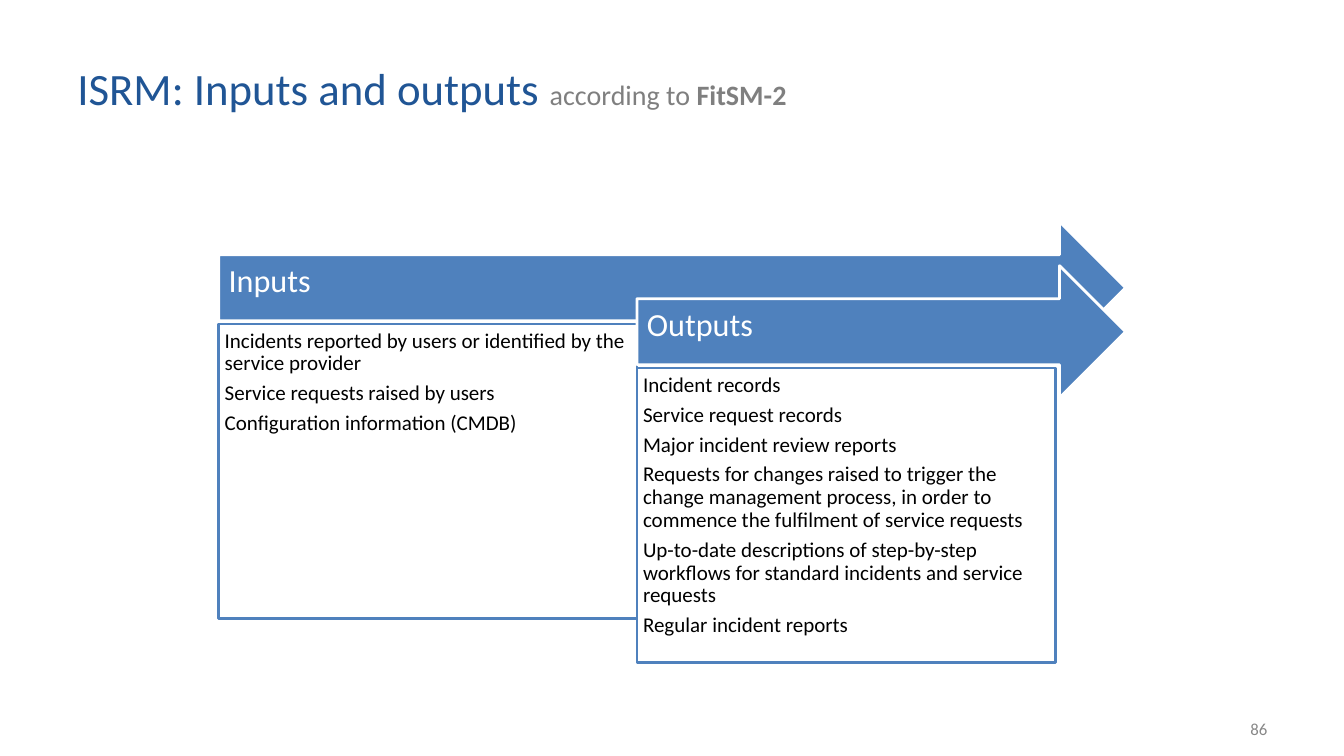
"""Build the slide on ISRM inputs and outputs according to FitSM-2."""
from dataclasses import dataclass

from pptx import Presentation
from pptx.dml.color import RGBColor
from pptx.enum.shapes import MSO_SHAPE
from pptx.enum.text import MSO_ANCHOR, PP_ALIGN
from pptx.util import Pt

ARROW, PANEL = MSO_SHAPE.RIGHT_ARROW, MSO_SHAPE.RECTANGLE
TOP, MIDDLE = MSO_ANCHOR.TOP, MSO_ANCHOR.MIDDLE
LEFT, RIGHT = PP_ALIGN.LEFT, PP_ALIGN.RIGHT


@dataclass(frozen=True)
class Theme:
    font: str = "Calibri"
    title: str = "205595"
    subtitle: str = "7F7F7F"
    accent: str = "4F81BD"
    white: str = "FFFFFF"
    black: str = "000000"
    number: str = "888888"
    title_size: float = 32
    subtitle_size: float = 20
    label_size: float = 23
    item_size: float = 15
    number_size: float = 12


theme = Theme()


def style(font, size, color, bold=False):
    font.name, font.size, font.bold = theme.font, Pt(size), bold
    font.color.rgb = RGBColor.from_string(color)


def add_block(kind, box, fill, line, lines, size, color, anchor, insets):
    block = slide.shapes.add_shape(kind, *map(Pt, box))
    block.shadow.inherit = False
    block.fill.solid()
    block.fill.fore_color.rgb = RGBColor.from_string(fill)
    block.line.color.rgb = RGBColor.from_string(line)
    block.line.width = Pt(2)
    frame = block.text_frame
    frame.word_wrap = True
    frame.vertical_anchor = anchor
    (frame.margin_left, frame.margin_top,
     frame.margin_right, frame.margin_bottom) = map(Pt, insets)
    frame.text = "\n".join(lines)
    for index, paragraph in enumerate(frame.paragraphs):
        paragraph.alignment = LEFT
        paragraph.line_spacing = 0.9
        paragraph.space_before = Pt(5.2 if index else 0)
        style(paragraph.runs[0].font, size, color)


deck = Presentation()
deck.slide_width, deck.slide_height = Pt(960), Pt(540)
slide = deck.slides.add_slide(deck.slide_layouts[6])

heading = slide.shapes.add_textbox(Pt(48.2), Pt(21.6), Pt(712.8), Pt(82)).text_frame
heading.word_wrap = True
heading.vertical_anchor = MIDDLE
for text, size, color, bold in (
    ("ISRM: Inputs and outputs ", theme.title_size, theme.title, False),
    ("according to ", theme.subtitle_size, theme.subtitle, False),
    ("FitSM-2", theme.subtitle_size, theme.subtitle, True),
):
    part = heading.paragraphs[0].add_run()
    part.text = text
    style(part.font, size, color, bold)

flows = {
    "Inputs": [
        "Incidents reported by users or identified by the service provider",
        "Service requests raised by users",
        "Configuration information (CMDB)",
    ],
    "Outputs": [
        "Incident records",
        "Service request records",
        "Major incident review reports",
        "Requests for changes raised to trigger the change management process, "
        "in order to commence the fulfilment of service requests",
        "Up-to-date descriptions of step-by-step workflows for standard "
        "incidents and service requests",
        "Regular incident reports",
    ],
}
first_left, first_top, arrow_tip = 156.2, 158.4, 804
panel_width, panel_height = 298.8, 210.2
arrow_height, panel_drop, flow_drop = 94.3, 73, 31.4

for index, (label, items) in enumerate(flows.items()):
    left = first_left + index * panel_width
    top = first_top + index * flow_drop
    add_block(ARROW, (left, top, arrow_tip - left, arrow_height),
              theme.accent, theme.white, [label], theme.label_size,
              theme.white, MIDDLE, (7.2, 7.2, 20.2, 15.1))
    add_block(PANEL, (left, top + panel_drop, panel_width, panel_height),
              theme.white, theme.accent, items, theme.item_size,
              theme.black, TOP, (4.3, 4.3, 4.3, 4.3))

page = slide.shapes.add_textbox(Pt(688.3), Pt(506.2), Pt(224), Pt(28.8)).text_frame
page.word_wrap = True
page.vertical_anchor = MIDDLE
page.text = "86"
page.paragraphs[0].alignment = RIGHT
style(page.paragraphs[0].runs[0].font, theme.number_size, theme.number)

deck.save("out.pptx")
